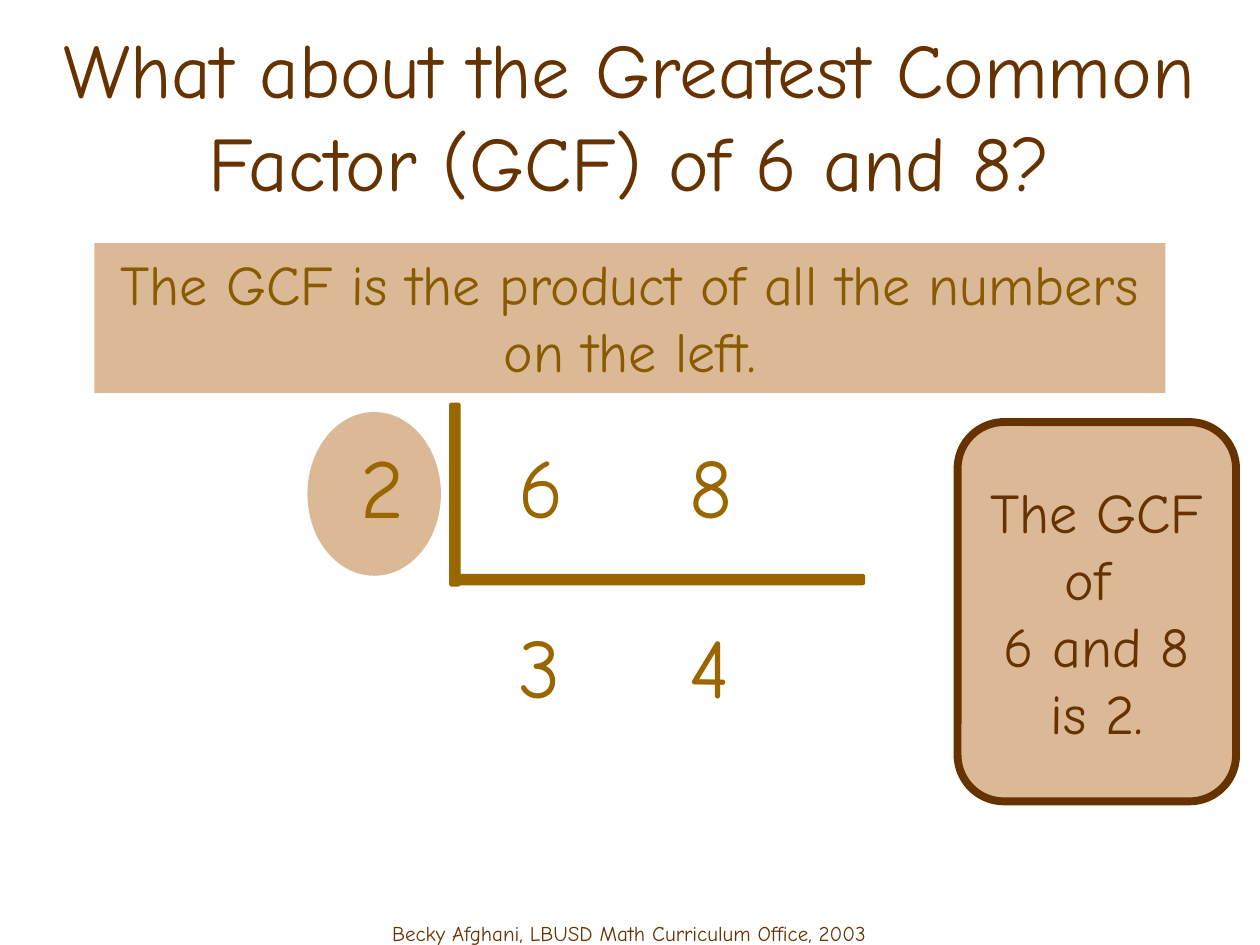
import pptx
import pptx.util
import pptx.dml.color
import pptx.enum.shapes
import pptx.enum.text
from dataclasses import dataclass

Inches = pptx.util.Inches
Pt = pptx.util.Pt
Kind = pptx.enum.shapes.MSO_SHAPE
Anchor = pptx.enum.text.MSO_ANCHOR


@dataclass(frozen=True)
class Theme:
    font: str = "Comic Neue"
    dark: str = "663300"
    gold: str = "996600"
    rule: str = "885B00"
    tan: str = "DCB996"
    title: int = 44
    digit: int = 48
    body: int = 32
    foot: int = 12


theme = Theme()
color = pptx.dml.color.RGBColor.from_string

deck = pptx.Presentation()
deck.slide_width, deck.slide_height = Inches(10), Inches(7.5)
slide = deck.slides.add_slide(deck.slide_layouts[6])


def add_form(kind, left, top, width, height, fill, line=None, weight=0.75):
    form = slide.shapes.add_shape(
        kind, Inches(left), Inches(top), Inches(width), Inches(height))
    form.shadow.inherit = False
    form.fill.solid()
    form.fill.fore_color.rgb = color(fill)
    if line:
        form.line.color.rgb = color(line)
        form.line.width = Pt(weight)
    else:
        form.line.fill.background()
    return form


def add_text(text, box=None, form=None, size=theme.body, tint=theme.dark,
             anchor=Anchor.TOP, wrap=True):
    if form is None:
        form = slide.shapes.add_textbox(*[Inches(n) for n in box])
    frame = form.text_frame
    frame.word_wrap = wrap
    frame.vertical_anchor = anchor
    frame.text = text
    for para in frame.paragraphs:
        para.alignment = pptx.enum.text.PP_ALIGN.CENTER
        para.font.name = theme.font
        para.font.size = Pt(size)
        para.font.color.rgb = color(tint)


# Footer
add_text("Becky Afghani, LBUSD Math Curriculum Office, 2003",
         box=(0.78, 7.26, 8.43, 0.5), size=theme.foot)

# Highlight behind the common factor
add_form(Kind.OVAL, 2.44, 3.27, 1.06, 1.3, theme.tan)

# Title
add_text("What about the Greatest Common Factor (GCF) of 6 and 8?",
         box=(0, 0.28, 10, 1.25), size=theme.title, anchor=Anchor.MIDDLE)

# Rule banner
banner = add_form(Kind.RECTANGLE, 0.75, 1.93, 8.5, 1.19, theme.tan)
add_text("The GCF is the product of all the numbers on the left.",
         form=banner, tint=theme.rule)

# Division ladder: upright and base bars
for bar in ((3.57, 3.2, 0.08, 1.45), (3.57, 4.56, 3.29, 0.08)):
    add_form(Kind.ROUNDED_RECTANGLE, *bar, theme.gold, line=theme.gold)

# Ladder numbers, one row per step
cols = (2.76, 4.02, 5.37)
for top, row in ((3.4, "268"), (4.83, " 34")):
    for left, digit in zip(cols, row):
        if digit != " ":
            add_text(digit, box=(left, top, 0.41, 0.94), size=theme.digit,
                     tint=theme.gold, wrap=False)

# Answer card
card = add_form(Kind.ROUNDED_RECTANGLE, 7.6, 3.35, 2.21, 3.01, theme.tan,
                line=theme.dark, weight=4.5)
add_text("The GCF\nof \n6 and 8\nis 2.", form=card,
         anchor=Anchor.MIDDLE, wrap=False)

deck.save("out.pptx")
